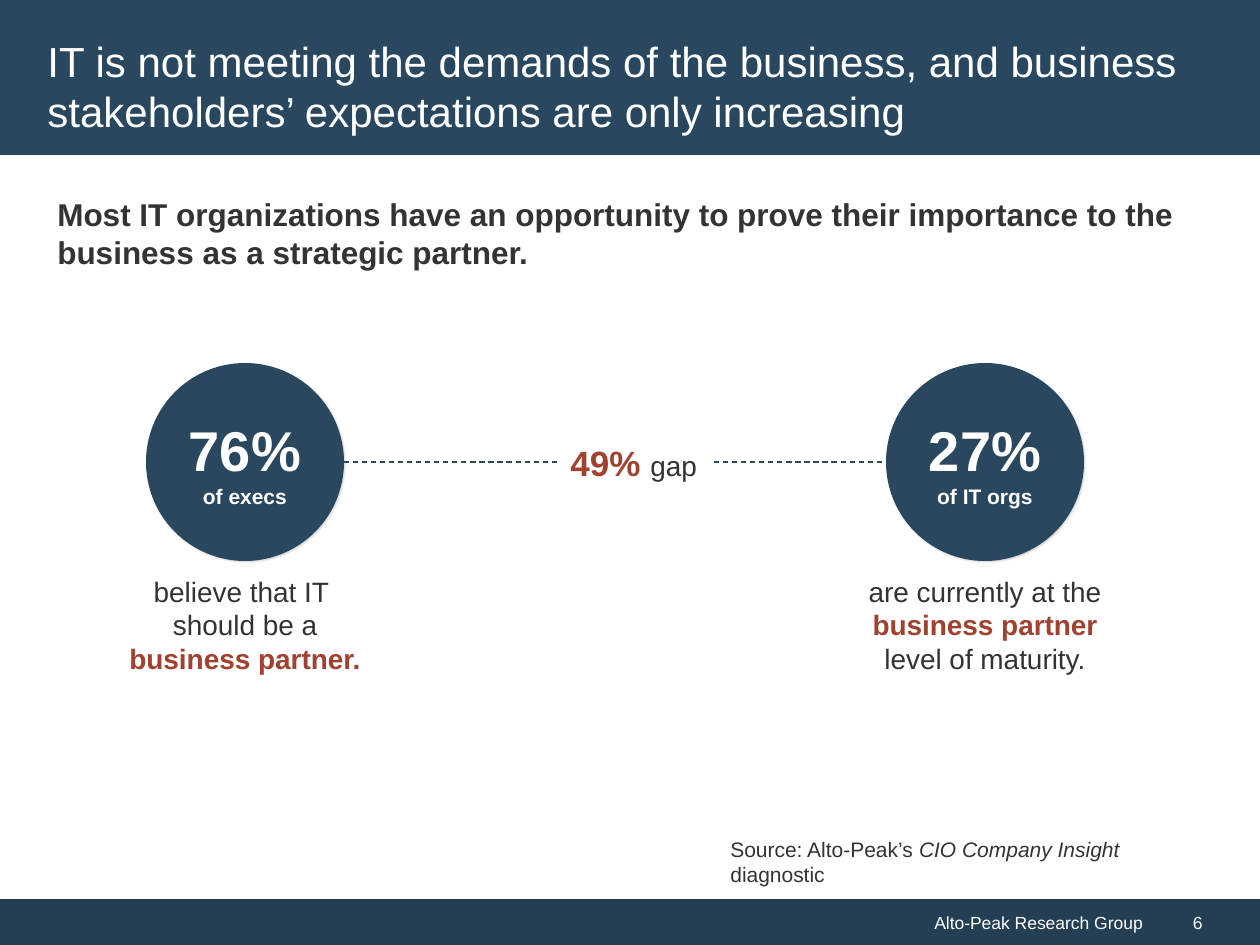
"""Build the slide on the gap between expected and current IT partnership."""
from dataclasses import dataclass

from lxml.etree import SubElement
from pptx import Presentation
from pptx.dml.color import RGBColor
from pptx.enum.dml import MSO_LINE
from pptx.enum.shapes import MSO_CONNECTOR, MSO_SHAPE
from pptx.enum.text import MSO_ANCHOR, PP_ALIGN
from pptx.oxml import parse_xml
from pptx.oxml.ns import nsdecls, qn
from pptx.util import Pt

SCALE = 914400 / 126


@dataclass(frozen=True)
class Theme:
    font: str = "Arial"
    navy: str = "29475F"
    footer: str = "243F54"
    white: str = "FFFFFF"
    ink: str = "333333"
    accent: str = "A24130"
    title: int = 24
    lead: int = 18
    figure: int = 32
    gap: int = 20
    body: int = 16
    small: int = 12
    tiny: int = 10


theme = Theme()


def px(length):
    return round(length * SCALE)


def add_block(place, paragraphs=(), fill=None, kind=MSO_SHAPE.RECTANGLE,
              align=PP_ALIGN.LEFT, space_after=0, **frame_format):
    place = [px(length) for length in place]
    if fill:
        box = page.shapes.add_shape(kind, *place)
        box.shadow.inherit = False
        box.fill.solid()
        box.fill.fore_color.rgb = RGBColor.from_string(fill)
        box.line.fill.background()
    else:
        box = page.shapes.add_textbox(*place)
    frame = box.text_frame
    settings = {"word_wrap": True, "vertical_anchor": MSO_ANCHOR.TOP} | frame_format
    for name, value in settings.items():
        setattr(frame, name, value)
    for index, spans in enumerate(paragraphs):
        para = frame.paragraphs[0] if index == 0 else frame.add_paragraph()
        para.alignment = align
        para.space_after = Pt(space_after)
        for text, size, color, style in spans:
            if text == "\n":
                para.add_line_break()
                continue
            span = para.add_run()
            span.text = text
            span.font.color.rgb = RGBColor.from_string(color)
            font_format = {"name": theme.font, "size": Pt(size),
                           "bold": style == "bold", "italic": style == "italic"}
            for name, value in font_format.items():
                setattr(span.font, name, value)
    return box


deck = Presentation()
deck.slide_width, deck.slide_height = px(1260), px(945)
page = deck.slides.add_slide(deck.slide_layouts[6])
middle = {"vertical_anchor": MSO_ANCHOR.MIDDLE}

add_block((0, 899, 1155, 46), [[("Alto-Peak Research Group", theme.tiny, theme.white, "")]],
          theme.footer, align=PP_ALIGN.RIGHT, **middle)
add_block((1155, 899, 105, 46), [[("6", theme.tiny, theme.white, "")]],
          theme.footer, margin_left=px(38), **middle)
add_block((0, 0, 1260, 155), fill=theme.navy)
add_block((35, 25, 1188, 121), [[(
    "IT is not meeting the demands of the business, and business "
    "stakeholders’ expectations are only increasing", theme.title, theme.white, "")]], **middle)
add_block((45, 189, 1158, 111), [[(
    "Most IT organizations have an opportunity to prove their importance to the "
    "business as a strategic partner.", theme.lead, theme.ink, "bold")]], space_after=12)

circle_lefts = (146, 886)
circle_top, circle_size = 363, 198
for left, figure, group in zip(circle_lefts, ("76%", "27%"), ("of execs", "of IT orgs")):
    circle = add_block((left, circle_top, circle_size, circle_size),
                       [[(figure, theme.figure, theme.white, "bold")],
                        [(group, theme.small, theme.white, "bold")]],
                       theme.navy, MSO_SHAPE.OVAL, PP_ALIGN.CENTER,
                       margin_left=0, margin_right=0, margin_top=0, margin_bottom=0, **middle)
    effects = circle._element.spPr.find(qn("a:effectLst"))
    effects.append(parse_xml(
        f'<a:outerShdw {nsdecls("a")} blurRad="12700" dist="12700" dir="2700000">'
        '<a:srgbClr val="000000"><a:alpha val="15000"/></a:srgbClr></a:outerShdw>'))

add_block((98, 568, 294, 184), [[
    ("believe that IT ", theme.body, theme.ink, ""),
    ("\n", theme.body, theme.ink, ""),
    ("should be a ", theme.body, theme.ink, ""),
    ("business partner.", theme.body, theme.accent, "bold")]],
    align=PP_ALIGN.CENTER, space_after=8)
add_block((843, 568, 284, 170), [[
    ("are currently at the ", theme.body, theme.ink, ""),
    ("business partner ", theme.body, theme.accent, "bold"),
    ("level of maturity.", theme.body, theme.ink, "")]],
    align=PP_ALIGN.CENTER, space_after=6)

line_y = px(circle_top + circle_size // 2)
gap_line = page.shapes.add_connector(
    MSO_CONNECTOR.STRAIGHT, px(circle_lefts[0] + circle_size), line_y,
    px(circle_lefts[1]), line_y)
gap_line.line.color.rgb = RGBColor.from_string(theme.navy)
gap_line.line.width = Pt(0.75)
gap_line.line.dash_style = MSO_LINE.DASH
SubElement(gap_line._element.spPr, qn("a:effectLst"))

add_block((558, 435, 152, 55), [[
    ("49% ", theme.gap, theme.accent, "bold"),
    ("gap", theme.body, theme.ink, "")]], theme.white, word_wrap=False)
add_block((718, 830, 505, 38), [[
    ("Source: Alto-Peak’s ", theme.small, theme.ink, ""),
    ("CIO Company Insight ", theme.small, theme.ink, "italic"),
    ("diagnostic", theme.small, theme.ink, "")]], word_wrap=False)

deck.save("out.pptx")
